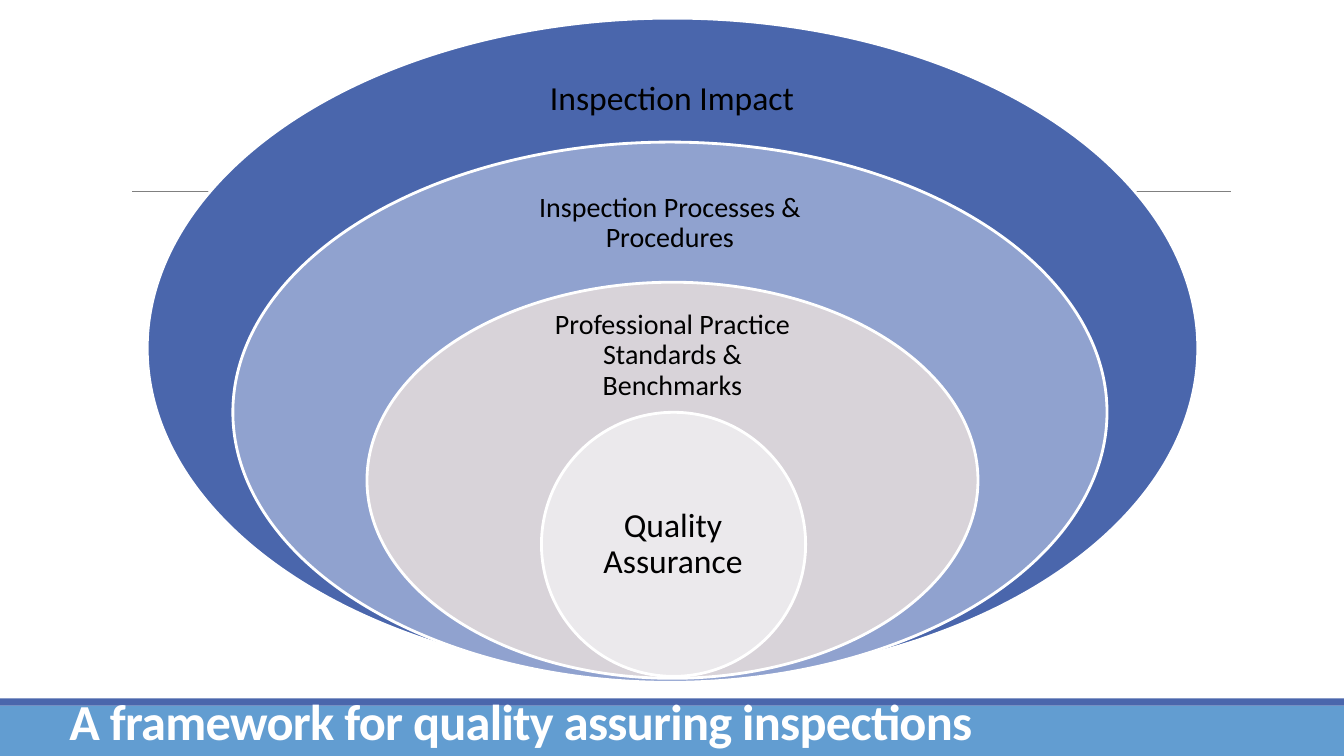
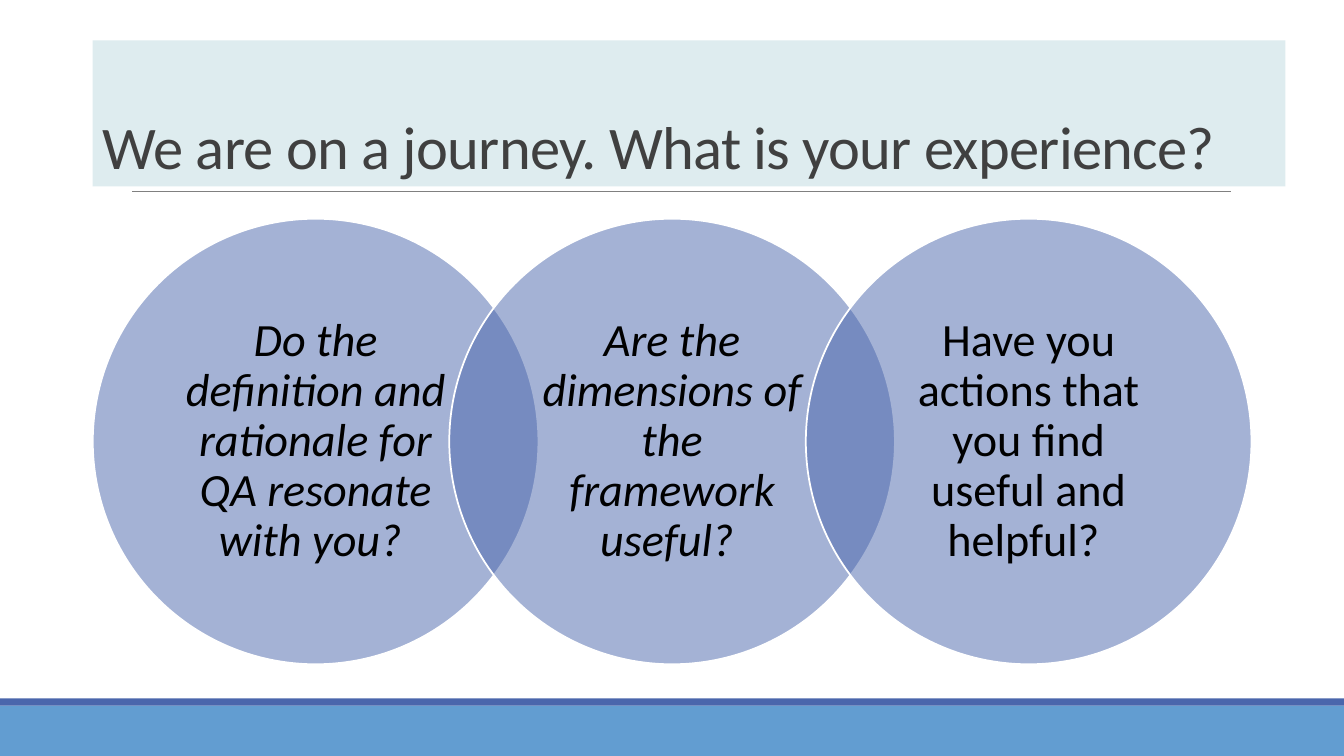
from lxml.etree import SubElement
from pptx import Presentation
from pptx.dml.color import RGBColor
from pptx.enum.shapes import MSO_CONNECTOR, MSO_SHAPE
from pptx.enum.text import MSO_ANCHOR, PP_ALIGN
from pptx.oxml.ns import qn
from pptx.util import Inches, Pt

FONT = "Calibri"
WHITE = RGBColor(0xFF, 0xFF, 0xFF)
BLACK = RGBColor(0x00, 0x00, 0x00)
DARK_GREY = RGBColor(0x40, 0x40, 0x40)
RULE_GREY = RGBColor(0x80, 0x80, 0x80)
BAND_BLUE = RGBColor(0x62, 0x9D, 0xD1)
INDIGO = RGBColor(0x4A, 0x66, 0xAC)
PERIWINKLE = RGBColor(0x90, 0xA2, 0xCF)
MAUVE = RGBColor(0xD8, 0xD3, 0xD9)
PALE_MAUVE = RGBColor(0xEB, 0xE9, 0xEC)
PALE_TEAL = RGBColor(0xDE, 0xEC, 0xEF)

SLIDE_W, SLIDE_H = 13.33, 7.5

# Offset in the diagram, size, fill; then label offset, label size, text, points, inset
RINGS = [
    ((0, 0, 10.42, 6.55), INDIGO,
     (3.75, 0.32, 2.91, 0.98), "Inspection Impact", 24, 0.19),
    ((0.85, 1.23, 8.67, 5.36), PERIWINKLE,
     (3.67, 1.55, 3.03, 0.97), "Inspection Processes & Procedures", 20, 0.16),
    ((2.18, 2.62, 6.06, 3.93), MAUVE,
     (3.8, 2.91, 2.82, 0.88), "Professional Practice Standards & Benchmarks", 20, 0.16),
    ((3.91, 3.91, 2.62, 2.62), PALE_MAUVE,
     (4.29, 4.57, 1.85, 1.31), "Quality Assurance", 24, 0.19),
]

# Question and whether it is in italics
QUESTIONS = [
    ("Do the definition and rationale for QA resonate with you? ", True),
    ("Are the dimensions of the framework useful? ", True),
    ("Have you actions that you find useful and helpful? ", False),
]


def add_filled(slide, kind, box, fill, line_width=None):
    """Add a preset shape, outlined in white if a line width is given."""
    sp = slide.shapes.add_shape(kind, *map(Inches, box))
    sp.shadow.inherit = False
    sp.fill.solid()
    sp.fill.fore_color.rgb = fill
    if line_width:
        sp.line.color.rgb = WHITE
        sp.line.width = Pt(line_width)
    else:
        sp.line.fill.background()
    return sp


def set_text(sp, text, size, color, *, align=PP_ALIGN.CENTER, anchor=MSO_ANCHOR.MIDDLE,
             spacing=0.9, inset=(0.1, 0.05), bold=False, italic=False):
    tf = sp.text_frame
    tf.word_wrap = True
    tf.vertical_anchor = anchor
    tf.margin_left = tf.margin_right = Inches(inset[0])
    tf.margin_top = tf.margin_bottom = Inches(inset[1])
    p = tf.paragraphs[0]
    p.text = text
    p.alignment = align
    p.line_spacing = spacing
    r = p.runs[0]
    r.font.name = FONT
    r.font.size = Pt(size)
    r.font.color.rgb = color
    r.font.bold = bold
    r.font.italic = italic
    return r


def set_title(sp, text, size, color, bold=False):
    r = set_text(sp, text, size, color, align=PP_ALIGN.LEFT,
                 anchor=MSO_ANCHOR.BOTTOM, spacing=0.85, bold=bold)
    r.font._element.set("spc", "-50")


def set_alpha(sp, percent):
    color = sp.fill._xPr.find(qn("a:solidFill"))[0]
    SubElement(color, qn("a:alpha")).set("val", str(percent * 1000))


def add_base_slide(prs):
    """Add a blank slide with the footer bands and the title rule."""
    slide = prs.slides.add_slide(prs.slide_layouts[6])
    add_filled(slide, MSO_SHAPE.RECTANGLE, (0, 7, SLIDE_W, 0.5), BAND_BLUE)
    add_filled(slide, MSO_SHAPE.RECTANGLE, (0, 6.93, SLIDE_W, 0.07), INDIGO)
    rule = slide.shapes.add_connector(
        MSO_CONNECTOR.STRAIGHT, Inches(1.31), Inches(1.9), Inches(12.21), Inches(1.9))
    rule.line.color.rgb = RULE_GREY
    rule.line.width = Pt(0.5)
    SubElement(rule._element.spPr, qn("a:effectLst"))
    return slide


def add_nested_rings(slide, left, top):
    def place(box):
        x, y, w, h = box
        return left + x, top + y, w, h

    for ring, fill, label, text, size, inset in RINGS:
        add_filled(slide, MSO_SHAPE.OVAL, place(ring), fill, 2)
        tb = slide.shapes.add_textbox(*map(Inches, place(label)))
        set_text(tb, text, size, BLACK, inset=(inset, inset))


def add_question_circles(slide, left, top, diameter):
    """Add a row of see-through circles, each overlapping the last by a fifth."""
    for i, (text, italic) in enumerate(QUESTIONS):
        box = (left + i * 0.8 * diameter, top, diameter, diameter)
        sp = add_filled(slide, MSO_SHAPE.OVAL, box, INDIGO, 1.25)
        set_alpha(sp, 50)
        set_text(sp, text, 33, BLACK, inset=(0.24, 0.05), italic=italic)


def build_framework_slide(prs):
    slide = add_base_slide(prs)
    add_nested_rings(slide, 1.46, 0.18)
    title = slide.shapes.add_textbox(Inches(0.59), Inches(6.42), Inches(11), Inches(1.08))
    set_title(title, "A framework for quality assuring inspections", 36, WHITE, bold=True)


def build_journey_slide(prs):
    slide = add_base_slide(prs)
    title = add_filled(slide, MSO_SHAPE.RECTANGLE, (0.92, 0.4, 11.83, 1.45), PALE_TEAL)
    set_title(title, "We are on a journey. What is your experience?", 43.2, DARK_GREY)
    add_question_circles(slide, 0.92, 2.17, 4.42)


def main():
    prs = Presentation()
    prs.slide_width = Inches(SLIDE_W)
    prs.slide_height = Inches(SLIDE_H)
    build_framework_slide(prs)
    build_journey_slide(prs)
    prs.save("out.pptx")


if __name__ == "__main__":
    main()
